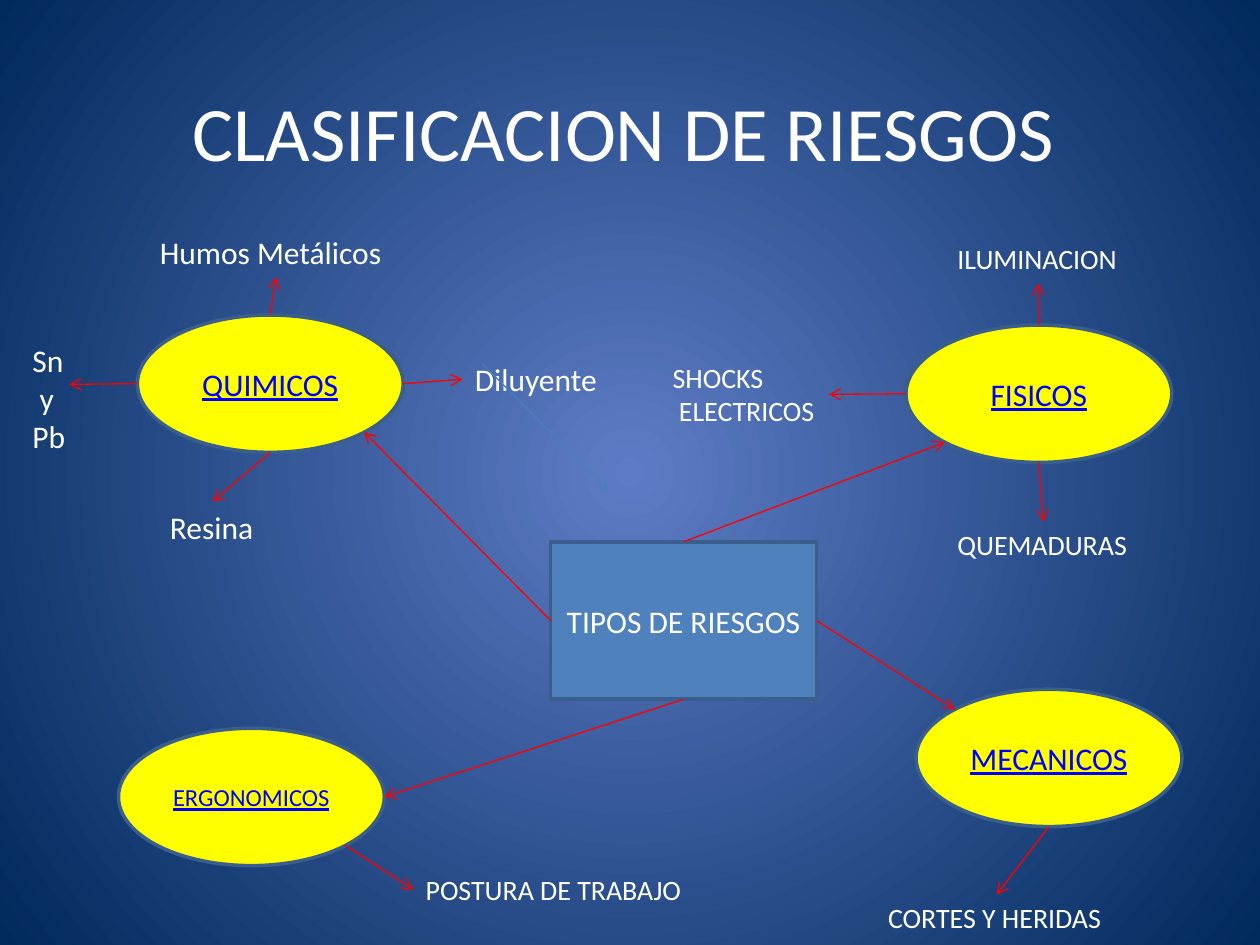
import math
import pptx
import pptx.dml.color
import pptx.enum.dml
import pptx.enum.shapes
import pptx.enum.text
import pptx.oxml
import pptx.oxml.ns
import pptx.util
from pptx.util import Inches

WHITE, RED, BLUE, YELLOW = "FFFFFF", "FF0000", "0000FF", "FFFF00"
BOX_FILL, OUTLINE, FAINT_BLUE = "4F81BD", "3A5F8C", "4B7EBC"
CENTER_COLOR, EDGE_COLOR = "5E7CC5", "00295C"

TITLE = ("CLASIFICACION DE RIESGOS", 0.7, 0.23, 8.5, 1.61)
HUB = ("TIPOS DE RIESGOS", 4.37, 4.3, 2.11, 1.25)
OVAL_WIDTH, OVAL_HEIGHT = 2.11, 1.09

# Risk type: left, top, text size, hub side joined, direction of the oval point reached
RISKS = {
    "QUIMICOS": (1.09, 2.5, 18, 1, (1, 1)),
    "FISICOS": (7.19, 2.58, 18, 0, (-1, 1)),
    "ERGONOMICOS": (0.94, 5.78, 14, 2, (1, 0)),
    "MECANICOS": (7.27, 5.47, 18, 3, (-1, -1)),
}

# Example: lines, left, top, width, height, size, wrap
EXAMPLES = [
    (["Sn", " y", "Pb"], 0.16, 2.66, 0.57, 1.01, 18, True),
    (["Humos Metálicos"], 1.17, 1.8, 2.03, 0.4, 18, True),
    (["Resina"], 1.25, 3.98, 0.87, 0.4, 18, False),
    (["Diluyente"], 3.67, 2.81, 1.18, 0.4, 18, False),
    (["ILUMINACION"], 7.5, 1.87, 1.48, 0.37, 16, False),
    (["QUEMADURAS"], 7.5, 4.14, 1.57, 0.37, 16, False),
    (["SHOCKS", " ELECTRICOS"], 5.24, 2.81, 1.34, 0.64, 16, False),
    (["POSTURA DE TRABAJO"], 3.28, 6.88, 2.26, 0.37, 16, False),
    (["CORTES Y HERIDAS"], 6.95, 7.1, 1.92, 0.37, 16, False),
]

# Arrow to an example: risk type, direction of the oval point left, arrow tip
EXAMPLE_ARROWS = [
    ("QUIMICOS", (-1, 0), (0.55, 3.05)),
    ("QUIMICOS", (0, -1), (2.19, 2.2)),
    ("QUIMICOS", (1, 0), (3.67, 3.01)),
    ("QUIMICOS", (0, 1), (1.69, 3.98)),
    ("FISICOS", (0, -1), (8.24, 2.25)),
    ("FISICOS", (-1, 0), (6.58, 3.13)),
    ("FISICOS", (0, 1), (8.28, 4.14)),
    ("ERGONOMICOS", (1, 1), (3.28, 7.06)),
    ("MECANICOS", (0, 1), (7.91, 7.1)),
]
LOOSE_ARROW = ((3.83, 2.89), (4.83, 3.89))


def rgb(value):
    return pptx.dml.color.RGBColor.from_string(value)


def write(shape, lines, size, color=WHITE, centered=False, underline=False, wrap=True):
    frame = shape.text_frame
    frame.word_wrap = wrap
    if centered:
        frame.vertical_anchor = pptx.enum.text.MSO_ANCHOR.MIDDLE
    for index, line in enumerate(lines):
        paragraph = frame.add_paragraph() if index else frame.paragraphs[0]
        paragraph.alignment = (pptx.enum.text.PP_ALIGN.CENTER if centered
                               else pptx.enum.text.PP_ALIGN.LEFT)
        run = paragraph.add_run()
        run.text = line
        run.font.name = "Calibri"
        run.font.size = pptx.util.Pt(size)
        run.font.color.rgb = rgb(color)
        if underline:
            run.font.underline = True


def add_text(slide, lines, left, top, width, height, size, **options):
    box = slide.shapes.add_textbox(*map(Inches, (left, top, width, height)))
    write(box, lines, size, **options)


def add_node(slide, kind, fill, left, top, width, height):
    shape = slide.shapes.add_shape(kind, *map(Inches, (left, top, width, height)))
    shape.shadow.inherit = False
    shape.fill.solid()
    shape.fill.fore_color.rgb = rgb(fill)
    shape.line.color.rgb = rgb(OUTLINE)
    shape.line.width = pptx.util.Pt(2)
    return shape


def add_arrow(slide, start, end, color=RED):
    connector = slide.shapes.add_connector(
        pptx.enum.shapes.MSO_CONNECTOR.STRAIGHT, *map(Inches, (*start, *end)))
    connector.line.color.rgb = rgb(color)
    connector.line.width = pptx.util.Pt(0.75)
    properties = connector._element.spPr
    line = properties.find(pptx.oxml.ns.qn("a:ln"))
    pptx.oxml.ns  # namespace helpers
    line.append(pptx.oxml.parse_xml(
        f'<a:tailEnd {pptx.oxml.ns.nsdecls("a")} type="arrow"/>'))
    properties.append(pptx.oxml.parse_xml(
        f'<a:effectLst {pptx.oxml.ns.nsdecls("a")}/>'))
    return connector


def oval_point(risk, direction):
    left, top = RISKS[risk][:2]
    length = math.hypot(*direction)
    return (left + OVAL_WIDTH / 2 * (1 + direction[0] / length),
            top + OVAL_HEIGHT / 2 * (1 + direction[1] / length))


def paint_background(slide):
    fill = slide.background.fill
    fill.gradient()
    for stop, color in zip(fill.gradient_stops, (CENTER_COLOR, EDGE_COLOR)):
        stop.color.rgb = rgb(color)
    gradient = slide._element.find(".//" + pptx.oxml.ns.qn("a:gradFill"))
    linear = gradient.find(pptx.oxml.ns.qn("a:lin"))
    gradient.replace(linear, pptx.oxml.parse_xml(
        f'<a:path {pptx.oxml.ns.nsdecls("a")} path="circle">'
        '<a:fillToRect l="50000" t="50000" r="50000" b="50000"/></a:path>'))


def main():
    presentation = pptx.Presentation()
    presentation.slide_width, presentation.slide_height = Inches(10), Inches(7.5)
    slide = presentation.slides.add_slide(presentation.slide_layouts[6])
    paint_background(slide)

    # Title and hub
    add_text(slide, [TITLE[0]], *TITLE[1:], 44, centered=True)
    hub = add_node(slide, pptx.enum.shapes.MSO_SHAPE.RECTANGLE, BOX_FILL, *HUB[1:])
    write(hub, [HUB[0]], 18, centered=True)

    # Risk types
    for risk, (left, top, size, _, _) in RISKS.items():
        oval = add_node(slide, pptx.enum.shapes.MSO_SHAPE.OVAL, YELLOW,
                        left, top, OVAL_WIDTH, OVAL_HEIGHT)
        write(oval, [risk], size, BLUE, centered=True, underline=True)

    # Examples
    for lines, left, top, width, height, size, wrap in EXAMPLES:
        add_text(slide, lines, left, top, width, height, size, wrap=wrap)

    # Arrows
    for risk, direction, tip in EXAMPLE_ARROWS:
        add_arrow(slide, oval_point(risk, direction), tip)
    add_arrow(slide, *LOOSE_ARROW, color=FAINT_BLUE)
    for risk, (_, _, _, side, direction) in RISKS.items():
        arrow = add_arrow(slide, HUB[1:3], oval_point(risk, direction))
        arrow.begin_connect(hub, side)

    presentation.save("out.pptx")


if __name__ == "__main__":
    main()
